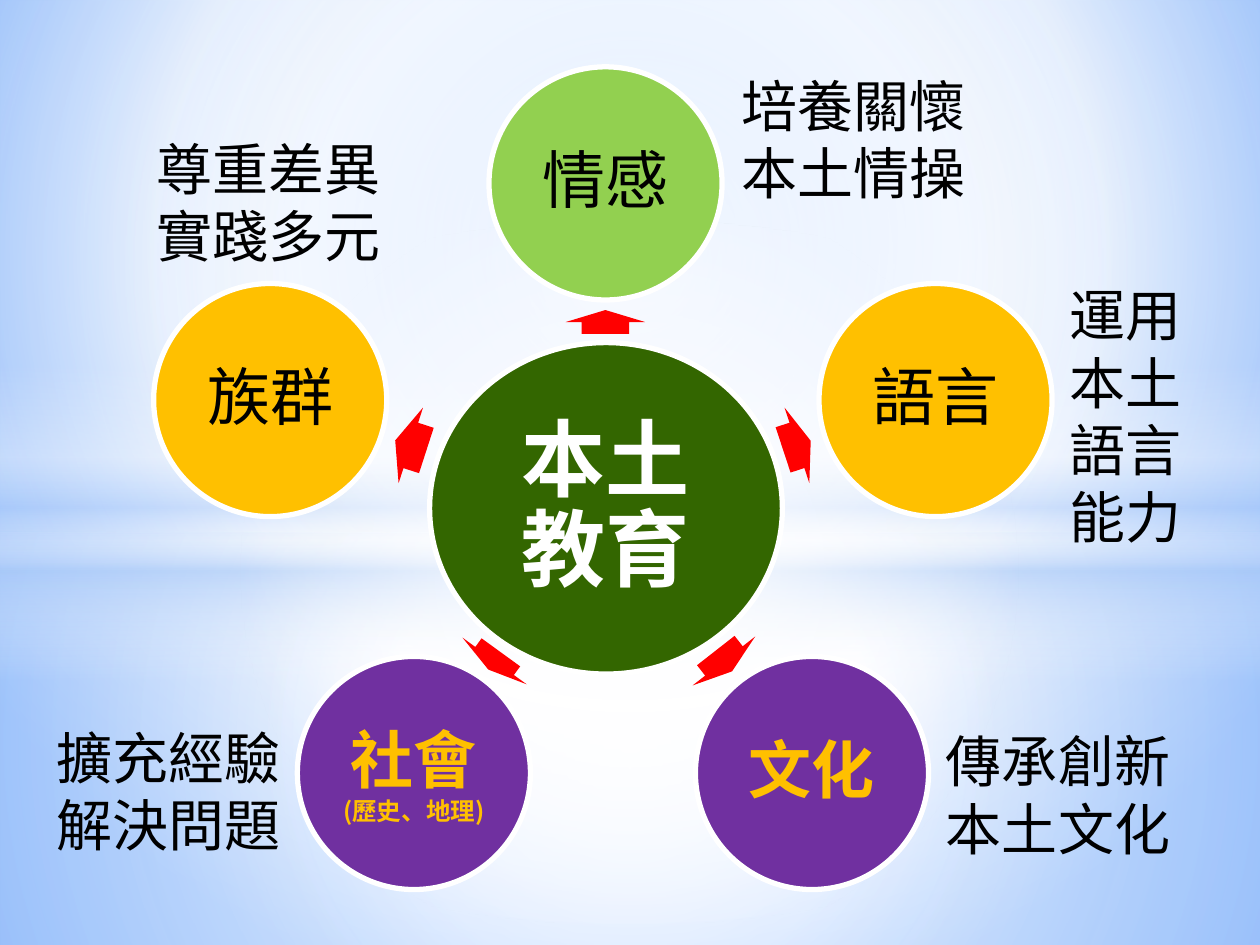
from lxml.etree import SubElement
from pptx import Presentation
from pptx.dml.color import RGBColor
from pptx.enum.shapes import MSO_SHAPE
from pptx.enum.text import MSO_ANCHOR, MSO_AUTO_SIZE, PP_ALIGN
from pptx.oxml.ns import qn
from pptx.util import Pt

CJK = "Noto Sans CJK SC"
LATIN = "Karla"
NODE = 133.2
ARROW_H = 45.4


def rgb(value):
    return RGBColor.from_string(value)


def set_gradient(fill, stops, focus=None, angle=90):
    fill.gradient()
    grad = fill._xPr.find(qn("a:gradFill"))
    for child in list(grad):
        grad.remove(child)
    gs_list = SubElement(grad, qn("a:gsLst"))
    for pos, color, alpha in stops:
        gs = SubElement(gs_list, qn("a:gs"), pos=str(pos * 1000))
        clr = SubElement(gs, qn("a:srgbClr"), val=color)
        if alpha < 100:
            SubElement(clr, qn("a:alpha"), val=str(alpha * 1000))
    if focus:
        shade = SubElement(grad, qn("a:path"), path="circle")
        sides = {side: str(n * 1000) for side, n in zip("ltrb", focus)}
        SubElement(shade, qn("a:fillToRect"), **sides)
    else:
        SubElement(grad, qn("a:lin"), ang=str(angle * 60000), scaled="0")


class Deck:
    def __init__(self, prs):
        self.s = prs.slides.add_slide(prs.slide_layouts[6])

    def background(self, stops, focus):
        set_gradient(self.s.background.fill, stops, focus)

    def shape(self, kind, x, y, w, h):
        sp = self.s.shapes.add_shape(kind, Pt(x), Pt(y), Pt(w), Pt(h))
        sp.shadow.inherit = False
        sp.line.fill.background()
        return sp

    def glow(self, kind, y, h, stops, focus=None):
        sp = self.shape(kind, 0, y, 720, h)
        set_gradient(sp.fill, stops, focus)

    def style(self, p, size, color, bold=False, font=CJK):
        for r in p.runs:
            r.font.size = Pt(size)
            r.font.bold = bold
            r.font.name = font
            r.font.color.rgb = rgb(color)
            SubElement(r.font._element, qn("a:ea"), typeface=CJK)

    def circle(self, x, y, w, h, fill, lines, color, bold, inset=3.6, spacing=0.9):
        sp = self.shape(MSO_SHAPE.OVAL, x, y, w, h)
        sp.fill.solid()
        sp.fill.fore_color.rgb = rgb(fill)
        sp.line.color.rgb = rgb("FFFFFF")
        sp.line.width = Pt(3)
        tf = sp.text_frame
        tf.word_wrap = True
        tf.vertical_anchor = MSO_ANCHOR.MIDDLE
        tf.margin_left = tf.margin_right = tf.margin_top = tf.margin_bottom = Pt(inset)
        tf.text = "\n".join(text for text, _ in lines)
        for p, (_, size) in zip(tf.paragraphs, lines):
            p.alignment = PP_ALIGN.CENTER
            p.line_spacing = spacing
            self.style(p, size, color, bold)

    def arrow(self, x, y, w, rotation):
        sp = self.shape(MSO_SHAPE.RIGHT_ARROW, x, y, w, ARROW_H)
        sp.adjustments[0] = 0.6
        sp.adjustments[1] = 0.5
        sp.rotation = rotation
        sp.fill.solid()
        sp.fill.fore_color.rgb = rgb("FF0000")

    def label(self, x, y, w, h, text):
        sp = self.s.shapes.add_textbox(Pt(x), Pt(y), Pt(w), Pt(h))
        tf = sp.text_frame
        tf.word_wrap = True
        tf.auto_size = MSO_AUTO_SIZE.SHAPE_TO_FIT_TEXT
        tf.text = text
        self.style(tf.paragraphs[0], 32, "000000", font=LATIN)


def main():
    prs = Presentation()
    prs.slide_width, prs.slide_height = Pt(720), Pt(540)
    deck = Deck(prs)

    center = (50, 50, 50, 50)
    deck.background(
        [(0, "95C0FF", 100), (60, "FFFFFF", 100), (100, "5599FF", 100)],
        (20, 10, 20, 60))
    deck.glow(MSO_SHAPE.RECTANGLE, 304.6, 235.4,
              [(0, "FFFFFF", 91), (37, "FFFFFF", 76), (100, "ACCBF9", 79)], center)
    deck.glow(MSO_SHAPE.RECTANGLE, 0, 304.6,
              [(0, "FFFFFF", 89), (48, "FFFFFF", 62), (100, "ACCBF9", 79)], center)
    deck.glow(MSO_SHAPE.RECTANGLE, 208.8, 180,
              [(0, "FFFFFF", 0), (29, "FFFFFF", 30), (45, "ACCBF9", 40),
               (55, "FFFFFF", 26), (65, "ACCBF9", 60), (100, "FFFFFF", 0)])
    deck.glow(MSO_SHAPE.OVAL, 126, 401.8,
              [(0, "FFFFFF", 100), (54, "FFFFFF", 0)], center)

    deck.circle(245.5, 195.8, 201.6, 189.4, "336600",
                [("本土", 48), ("教育", 48)], "FFFFFF", True, inset=5)

    arrows = [
        (339.1, 161.3, 13.7, 270),
        (447.1, 231.8, 16.6, 341.8),
        (406.1, 355, 15.1, 52),
        (276.5, 355, 12.2, 126),
        (225.4, 231.8, 18.7, 197.9),
    ]
    nodes = [
        (279.4, 38.2, "92D050", [("情感", 36)], "000000", False, 0.9),
        (468, 162, "FFC000", [("語言", 36)], "000000", False, 0.9),
        (397.4, 375.1, "7030A0", [("文化", 36)], "FFC000", True, 0.9),
        (169.9, 375.1, "7030A0", [("社會", 36), ("(歷史、地理)", 14)], "FFC000", True, 1.0),
        (87.8, 162, "FFC000", [("族群", 36)], "000000", False, 0.9),
    ]
    for arrow, (x, y, fill, lines, color, bold, spacing) in zip(arrows, nodes):
        deck.arrow(*arrow)
        deck.circle(x, y, NODE, NODE, fill, lines, color, bold, spacing=spacing)

    labels = [
        (416.9, 37.4, 147.6, 85, "培養關懷本土情操"),
        (604.1, 157, 89.3, 162.7, "運用本土語言能力"),
        (533.5, 411.8, 146.2, 85, "傳承創新本土文化"),
        (25.2, 409.7, 146.2, 85, "擴充經驗解決問題"),
        (82.1, 73.4, 146.2, 85, "尊重差異實踐多元"),
    ]
    for label in labels:
        deck.label(*label)

    prs.save("out.pptx")


if __name__ == "__main__":
    main()
